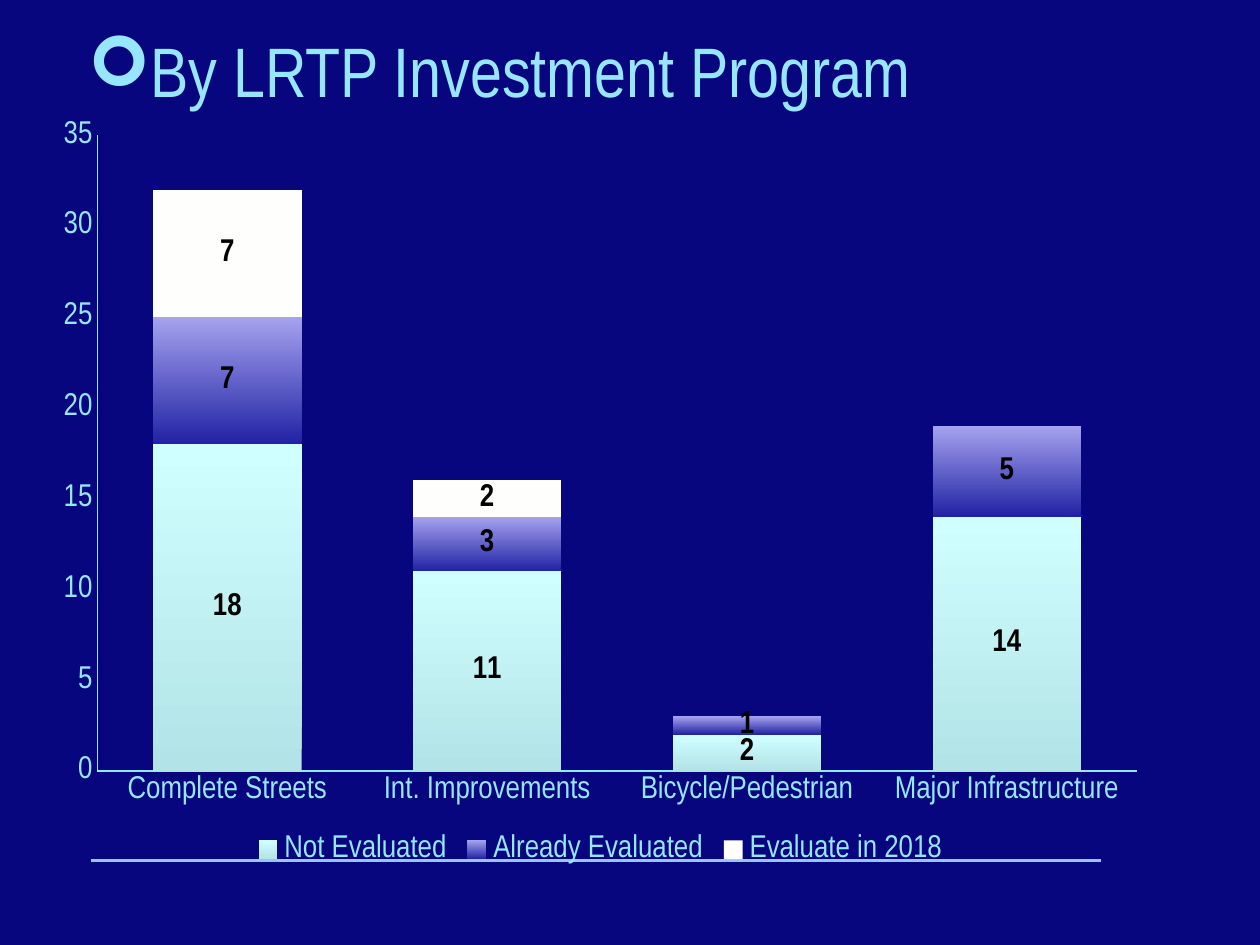
"""Build a slide with a stacked column chart of projects by investment program."""
from dataclasses import dataclass

from lxml.etree import SubElement
from pptx import Presentation
from pptx.chart.axis import _BaseAxis as Axis
from pptx.chart.chart import Chart
from pptx.chart.data import CategoryChartData
from pptx.chart.series import BarSeries
from pptx.dml.color import RGBColor
from pptx.enum.chart import XL_CHART_TYPE as ChartType
from pptx.enum.chart import XL_LABEL_POSITION as LabelPosition
from pptx.enum.chart import XL_LEGEND_POSITION as LegendPosition
from pptx.enum.chart import XL_TICK_MARK as TickMark
from pptx.enum.shapes import MSO_CONNECTOR as ConnectorType
from pptx.oxml.ns import qn
from pptx.slide import Slide
from pptx.util import Inches, Pt

NAVY = RGBColor(0x07, 0x06, 0x7E)
SKY = RGBColor(0x97, 0xE6, 0xFF)
RULE_BLUE = RGBColor(0x9D, 0xC2, 0xFF)
BLACK = RGBColor(0x00, 0x00, 0x00)
AQUA = RGBColor(0xB2, 0xE3, 0xE6)
PALE_AQUA = RGBColor(0xD0, 0xFF, 0xFF)
INDIGO = RGBColor(0x22, 0x22, 0xA5)
LAVENDER = RGBColor(0xA5, 0xA3, 0xEE)
WHITE = RGBColor(0xFE, 0xFF, 0xFD)
FONT = "Arial Narrow"

CATEGORIES = ["Complete Streets", "Int. Improvements",
              "Bicycle/Pedestrian", "Major Infrastructure"]
PLOT_AREA = {"x": 0.05, "y": 0.04, "w": 0.93, "h": 0.83}


@dataclass(frozen=True)
class Status:
    name: str
    counts: tuple[int, ...]
    bottom: RGBColor
    top: RGBColor


STATUSES = [
    Status("Not Evaluated", (18, 11, 2, 14), AQUA, PALE_AQUA),
    Status("Already Evaluated", (7, 3, 1, 5), INDIGO, LAVENDER),
    Status("Evaluate in 2018", (7, 2, 0, 0), WHITE, WHITE),
]


def add_rule(slide: Slide) -> None:
    rule = slide.shapes.add_connector(
        ConnectorType.STRAIGHT, Inches(0.72), Inches(6.83), Inches(8.74), Inches(6.83))
    rule.line.color.rgb = RULE_BLUE
    rule.line.width = Pt(1.5)
    SubElement(rule._element.spPr, qn("a:effectLst"))


def add_heading(slide: Slide, text: str) -> None:
    box = slide.shapes.add_textbox(Inches(0.6), Inches(0.17), Inches(9.08), Inches(5.22))
    box.text_frame.word_wrap = True
    paragraph = box.text_frame.paragraphs[0]
    properties = paragraph._p.get_or_add_pPr()
    properties.set("marL", str(Inches(0.38)))
    properties.set("indent", str(Inches(-0.38)))
    SubElement(properties, qn("a:buFont"), typeface="Wingdings")
    SubElement(properties, qn("a:buChar"), char="➢")
    run = paragraph.add_run()
    run.text = text
    run.font.name = FONT
    run.font.size = Pt(40)
    run.font.color.rgb = SKY


def style_axis(axis: Axis) -> None:
    axis.has_major_gridlines = False
    axis.major_tick_mark = TickMark.NONE
    axis.minor_tick_mark = TickMark.NONE
    axis.format.line.color.rgb = SKY
    axis.format.line.width = Pt(1)


def style_series(series: BarSeries, status: Status) -> None:
    fill = series.format.fill
    if status.bottom == status.top:
        fill.solid()
        fill.fore_color.rgb = status.top
    else:
        fill.gradient()
        fill.gradient_angle = 90
        for stop, color in zip(fill.gradient_stops, (status.bottom, status.top)):
            stop.color.rgb = color
    labels = series.data_labels
    labels.show_value = True
    labels.number_format = "0;;;"
    labels.number_format_is_linked = False
    labels.position = LabelPosition.CENTER
    labels.font.name = FONT
    labels.font.size = Pt(18)
    labels.font.bold = True
    labels.font.color.rgb = BLACK


def place_plot_area(chart: Chart) -> None:
    plot_area = chart._chartSpace.chart.plotArea
    for old_layout in plot_area.findall(qn("c:layout")):
        plot_area.remove(old_layout)
    layout = SubElement(plot_area, qn("c:layout"))
    plot_area.insert(0, layout)
    manual = SubElement(layout, qn("c:manualLayout"))
    SubElement(manual, qn("c:layoutTarget"), val="inner")
    for side in ("x", "y"):
        SubElement(manual, qn(f"c:{side}Mode"), val="edge")
    for side, share in PLOT_AREA.items():
        SubElement(manual, qn(f"c:{side}"), val=str(share))


def add_status_chart(slide: Slide) -> None:
    data = CategoryChartData()
    data.categories = CATEGORIES
    for status in STATUSES:
        data.add_series(status.name, status.counts)
    chart = slide.shapes.add_chart(
        ChartType.COLUMN_STACKED, Inches(0.33), Inches(0.83),
        Inches(8.87), Inches(6.08), data).chart
    chart.has_title = False
    chart.font.name = FONT
    chart.font.size = Pt(18)
    chart.font.color.rgb = SKY
    chart.has_legend = True
    chart.legend.position = LegendPosition.BOTTOM
    chart.legend.include_in_layout = False
    plot = chart.plots[0]
    plot.gap_width = 75
    plot.overlap = 100
    plot.vary_by_categories = False
    for series, status in zip(plot.series, STATUSES):
        style_series(series, status)
    for axis in (chart.category_axis, chart.value_axis):
        style_axis(axis)
    chart.value_axis.minimum_scale = 0
    chart.value_axis.maximum_scale = 35
    chart.value_axis.major_unit = 5
    place_plot_area(chart)


def main() -> None:
    presentation = Presentation()
    presentation.slide_width = Inches(10)
    presentation.slide_height = Inches(7.5)
    slide = presentation.slides.add_slide(presentation.slide_layouts[6])
    slide.background.fill.solid()
    slide.background.fill.fore_color.rgb = NAVY
    add_rule(slide)
    add_heading(slide, "By LRTP Investment Program")
    add_status_chart(slide)
    presentation.save("out.pptx")


if __name__ == "__main__":
    main()
